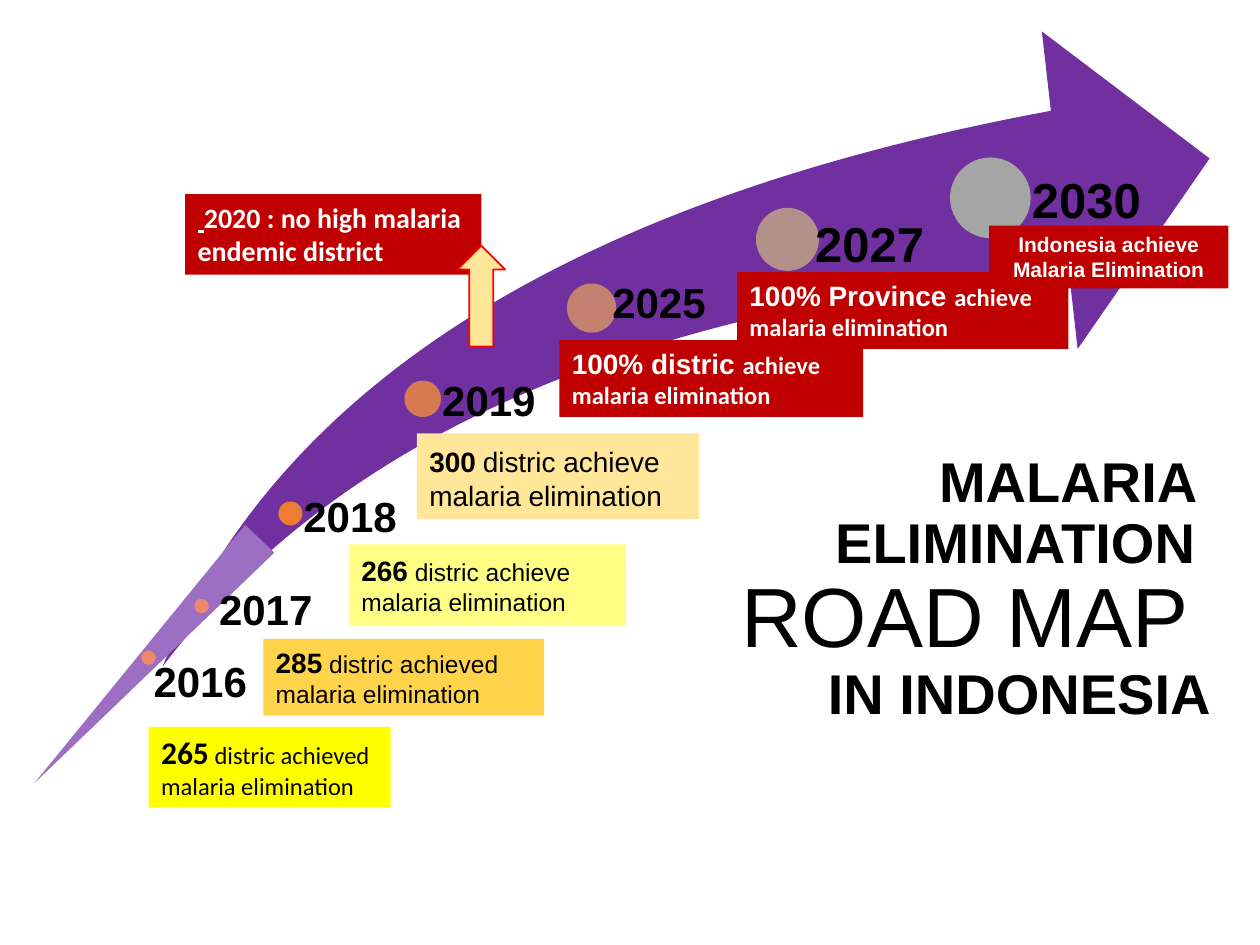
from pptx import Presentation
from pptx.dml.color import RGBColor
from pptx.enum.shapes import MSO_SHAPE
from pptx.enum.text import MSO_ANCHOR, PP_ALIGN
from pptx.util import Inches, Pt

BLACK = RGBColor(0x00, 0x00, 0x00)
WHITE = RGBColor(0xFF, 0xFF, 0xFF)
PURPLE = RGBColor(0x70, 0x30, 0xA0)
LILAC = RGBColor(0x9D, 0x6F, 0xC3)
RED = RGBColor(0xC0, 0x00, 0x00)
BRIGHT_RED = RGBColor(0xFF, 0x00, 0x00)
YELLOW = RGBColor(0xFF, 0xFF, 0x00)
PALE_YELLOW = RGBColor(0xFF, 0xFF, 0x85)
AMBER = RGBColor(0xFF, 0xD4, 0x4B)
CREAM = RGBColor(0xFF, 0xE6, 0x99)
SALMON = RGBColor(0xEF, 0x88, 0x68)
ORANGE = RGBColor(0xED, 0x7D, 0x31)
TERRACOTTA = RGBColor(0xD8, 0x7A, 0x51)
CLAY = RGBColor(0xC4, 0x81, 0x70)
DUSTY_ROSE = RGBColor(0xB4, 0x90, 0x8B)
GRAY = RGBColor(0xA5, 0xA5, 0xA5)

deck = Presentation()
deck.slide_width = Inches(10)
deck.slide_height = Inches(7.5)
page = deck.slides.add_slide(deck.slide_layouts[6])


def add_figure(kind, left, top, width, height, fill, line=None):
    figure = page.shapes.add_shape(
        kind, Inches(left), Inches(top), Inches(width), Inches(height))
    figure.shadow.inherit = False
    figure.fill.solid()
    figure.fill.fore_color.rgb = fill
    if line is None:
        figure.line.fill.background()
    else:
        figure.line.color.rgb = line
        figure.line.width = Pt(1)
    return figure


def write(spans, left, top, width, height, fill=None, color=BLACK, align=PP_ALIGN.LEFT,
          anchor=MSO_ANCHOR.TOP, spacing=1.0, insets=(0.1, 0.05), wrap=True):
    """Write (text, size, bold, font) spans; a newline ends a line."""
    if fill is None:
        box = page.shapes.add_textbox(
            Inches(left), Inches(top), Inches(width), Inches(height))
    else:
        box = add_figure(MSO_SHAPE.RECTANGLE, left, top, width, height, fill)
    frame = box.text_frame
    frame.word_wrap = wrap
    frame.vertical_anchor = anchor
    frame.margin_left, frame.margin_top = Inches(insets[0]), Inches(insets[1])
    para = frame.paragraphs[0]
    para.alignment = align
    para.line_spacing = spacing
    for text, size, bold, font in spans:
        span = para.add_run()
        span.text = text.rstrip("\n")
        span.font.size = Pt(size)
        span.font.bold = bold
        span.font.name = font
        span.font.color.rgb = color
        if text.endswith("\n"):
            para.add_line_break()
    return box


# Rising arrow
swoosh = add_figure(MSO_SHAPE.SWOOSH_ARROW, 1.29, 0.25, 8.31, 5.04, PURPLE)
swoosh.adjustments[0] = 0.25
swoosh.adjustments[1] = 0.25

# Milestones on the arrow: circle left, top, size, colour; year left, top, inset, size
milestones = [
    ("2018", 2.21, 3.98, 0.19, ORANGE, 2.31, 3.94, 0.1, 24),
    ("2019", 3.21, 3.02, 0.29, TERRACOTTA, 3.36, 3.02, 0.15, 24),
    ("2025", 4.5, 2.25, 0.39, CLAY, 4.66, 2.24, 0.2, 24),
    ("2027", 6, 1.65, 0.5, DUSTY_ROSE, 6.21, 1.75, 0.26, 28),
    ("2030", 7.54, 1.25, 0.64, GRAY, 7.85, 1.4, 0.34, 28),
]
for year, left, top, size, color, year_left, year_top, inset, points in milestones:
    add_figure(MSO_SHAPE.OVAL, left, top, size, size, color)
    write([(year, points, True, "Arial")], year_left, year_top, 1.5, 0.5,
          spacing=0.9, insets=(inset, 0))

# Tail of the arrow
tail = add_figure(MSO_SHAPE.ISOSCELES_TRIANGLE, 0.99, 3.91, 0.32, 2.64, LILAC)
tail.adjustments[0] = 0.354
tail.rotation = 223.7

# Early districts: number, its size and font, rest of text, its size, place, fill
ACHIEVED = "distric achieved malaria elimination"
ACHIEVE = "distric achieve malaria elimination"
district_boxes = [
    ("265", 18, "Calibri", ACHIEVED, 14, (1.18, 5.77, 1.92, 0.64), YELLOW, {}),
    ("285", 16, "Arial", ACHIEVED, 14, (2.09, 5.07, 2.23, 0.61), AMBER, {}),
    ("266", 16, "Arial", ACHIEVE, 14, (2.77, 4.32, 2.2, 0.65), PALE_YELLOW,
     {"anchor": MSO_ANCHOR.MIDDLE}),
    ("300", 16, "Arial", ACHIEVE, 16, (3.31, 3.44, 2.24, 0.68), CREAM,
     {"insets": (0.1, 0.09)}),
]
for number, points, font, rest, rest_points, place, fill, options in district_boxes:
    write([(number, points, True, font), (" ", 14, True, font),
           (rest, rest_points, False, font)], *place, fill=fill, **options)

# Later targets
for target, place in [("100% distric ", (4.44, 2.7, 2.41, 0.61)),
                      ("100% Province ", (5.85, 2.16, 2.63, 0.61))]:
    write([(target, 16, True, "Arial"),
           ("achieve malaria elimination", 14, True, "Calibri")],
          *place, fill=RED, color=WHITE)
write([("Indonesia achieve Malaria Elimination", 12, True, "Arial")],
      7.85, 1.79, 1.9, 0.5, fill=RED, color=WHITE, align=PP_ALIGN.CENTER)

# 2020 note with its pointer
note = write([(" ", 16, True, "Calibri"),
              ("2020 : no high malaria endemic district", 16, True, "Calibri")],
             1.47, 1.54, 2.35, 0.64, fill=RED, color=WHITE)
note.text_frame.paragraphs[0].runs[0].font.underline = True
add_figure(MSO_SHAPE.UP_ARROW, 3.63, 1.95, 0.38, 0.8, CREAM, line=BRIGHT_RED)

# First years on the tail
for year, left, top, dot_left, dot_top in [("2016", 1.12, 5.15, 1.13, 5.17),
                                           ("2017", 1.64, 4.58, 1.55, 4.76)]:
    write([(year, 24, True, "Arial")], left, top, 0.95, 0.5, wrap=False)
    add_figure(MSO_SHAPE.OVAL, dot_left, dot_top, 0.1, 0.1, SALMON, line=SALMON)

# Title
write([("MALARIA \n", 32, True, "Arial"), ("ELIMINATION \n", 32, True, "Arial"),
       ("ROAD MAP \n", 48, False, "Arial"), ("IN INDONESIA", 32, True, "Arial")],
      4.73, 3.96, 4.98, 1.45, align=PP_ALIGN.RIGHT, anchor=MSO_ANCHOR.MIDDLE, spacing=0.9)

deck.save("out.pptx")
